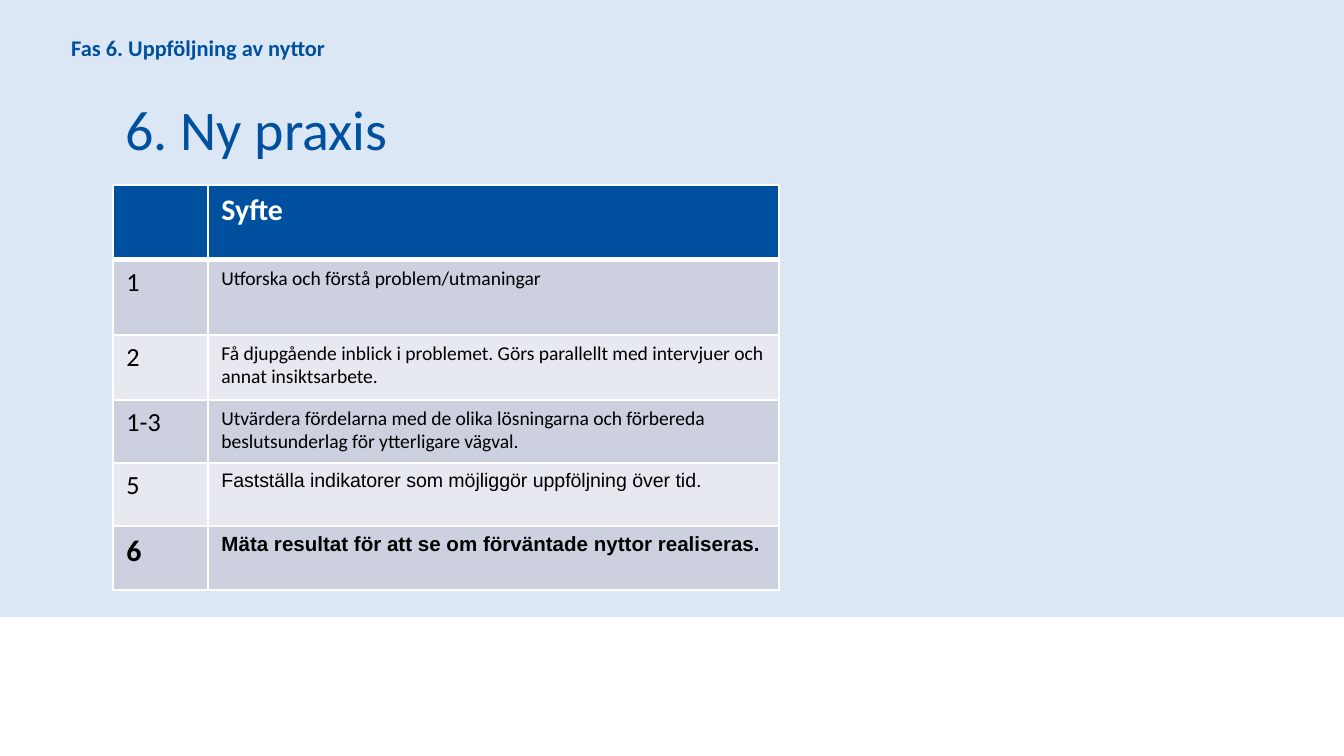
from dataclasses import dataclass

from lxml.etree import SubElement
from pptx import Presentation
from pptx.dml.color import RGBColor
from pptx.enum.shapes import MSO_SHAPE
from pptx.enum.text import MSO_ANCHOR, MSO_AUTO_SIZE, PP_ALIGN
from pptx.oxml.ns import qn
from pptx.shapes.base import BaseShape
from pptx.slide import Slide
from pptx.table import _Cell
from pptx.text.text import TextFrame
from pptx.util import Emu, Pt

PIXELS_PER_INCH = 134.4
BLUE = RGBColor(0x00, 0x50, 0xA0)
PALE_BLUE = RGBColor(0xDC, 0xE7, 0xF6)
DARK_BAND = RGBColor(0xCC, 0xD0, 0xDF)
LIGHT_BAND = RGBColor(0xE7, 0xE9, 0xF0)
WHITE = RGBColor(0xFF, 0xFF, 0xFF)
BLACK = RGBColor(0x00, 0x00, 0x00)


@dataclass(frozen=True)
class Box:
    left: int
    top: int
    width: int
    height: int


@dataclass(frozen=True)
class TextStyle:
    size: float
    color: RGBColor = BLACK
    font: str = "Calibri"
    bold: bool = False


@dataclass(frozen=True)
class PurposeRow:
    phase: str
    purpose: str
    height: int
    phase_style: TextStyle = TextStyle(14)
    purpose_style: TextStyle = TextStyle(10.5)


SLIDE_BOX = Box(0, 0, 1344, 756)
PANEL_BOX = Box(0, 0, 1344, 617)
TITLE_BOX = Box(112, 85, 1133, 86)
PHASE_BOX = Box(58, 36, 1185, 24)
TABLE_BOX = Box(113, 185, 666, 405)
COLUMN_WIDTHS = (95, 571)

HEADER_STYLE = TextStyle(16, WHITE, bold=True)
ROWS = (
    PurposeRow("", "Syfte", 75, HEADER_STYLE, HEADER_STYLE),
    PurposeRow("1", "Utforska och förstå problem/utmaningar", 75),
    PurposeRow(
        "2",
        "Få djupgående inblick i problemet. Görs parallellt med intervjuer och annat insiktsarbete.",
        65,
    ),
    PurposeRow(
        "1-3",
        "Utvärdera fördelarna med de olika lösningarna och förbereda beslutsunderlag för ytterligare vägval.",
        63,
    ),
    PurposeRow(
        "5",
        "Fastställa indikatorer som möjliggör uppföljning över tid.",
        63,
        purpose_style=TextStyle(10.5, font="Arial"),
    ),
    PurposeRow(
        "6",
        "Mäta resultat för att se om förväntade nyttor realiseras.",
        64,
        TextStyle(16, bold=True),
        TextStyle(11, font="Arial", bold=True),
    ),
)


def px(length: int) -> Emu:
    return Emu(round(length * 914400 / PIXELS_PER_INCH))


def bounds(box: Box) -> tuple[Emu, Emu, Emu, Emu]:
    return px(box.left), px(box.top), px(box.width), px(box.height)


def write_text(text_frame: TextFrame, text: str, style: TextStyle) -> None:
    paragraph = text_frame.paragraphs[0]
    paragraph.alignment = PP_ALIGN.LEFT
    run = paragraph.add_run()
    run.text = text
    run.font.name = style.font
    run.font.size = Pt(style.size)
    run.font.bold = style.bold
    run.font.color.rgb = style.color


def write_heading(shape: BaseShape, text: str, style: TextStyle) -> None:
    text_frame = shape.text_frame
    text_frame.word_wrap = True
    text_frame.auto_size = MSO_AUTO_SIZE.NONE
    text_frame.vertical_anchor = MSO_ANCHOR.MIDDLE
    write_text(text_frame, text, style)


def draw_panel(slide: Slide) -> None:
    panel = slide.shapes.add_shape(MSO_SHAPE.RECTANGLE, *bounds(PANEL_BOX))
    panel.shadow.inherit = False
    panel.fill.solid()
    panel.fill.fore_color.rgb = PALE_BLUE
    panel.line.fill.background()
    slide.shapes._spTree.insert(2, panel._element)


def draw_title(slide: Slide) -> None:
    title = slide.shapes.title
    title.left, title.top, title.width, title.height = bounds(TITLE_BOX)
    write_heading(title, "6. Ny praxis", TextStyle(30, BLUE))


def draw_phase(slide: Slide) -> None:
    phase = slide.shapes.add_textbox(*bounds(PHASE_BOX))
    write_heading(phase, "Fas 6. Uppföljning av nyttor", TextStyle(12, BLUE, bold=True))


def set_borders(cell: _Cell, top: int, bottom: int) -> None:
    properties = cell._tc.get_or_add_tcPr()
    for side, width in (("L", 1), ("R", 1), ("T", top), ("B", bottom)):
        line = SubElement(properties, qn(f"a:ln{side}"), w=str(Pt(width)))
        fill = SubElement(line, qn("a:solidFill"))
        SubElement(fill, qn("a:srgbClr"), val=str(WHITE))


def row_fill(index: int) -> RGBColor:
    if index == 0:
        return BLUE
    return DARK_BAND if index % 2 else LIGHT_BAND


def draw_table(slide: Slide) -> None:
    frame = slide.shapes.add_table(len(ROWS), len(COLUMN_WIDTHS), *bounds(TABLE_BOX))
    table = frame.table
    for column, width in zip(table.columns, COLUMN_WIDTHS):
        column.width = px(width)
    for index, row in enumerate(ROWS):
        table.rows[index].height = px(row.height)
        contents = ((row.phase, row.phase_style), (row.purpose, row.purpose_style))
        for column_index, (text, style) in enumerate(contents):
            cell = table.cell(index, column_index)
            set_borders(cell, 3 if index == 1 else 1, 3 if index == 0 else 1)
            cell.fill.solid()
            cell.fill.fore_color.rgb = row_fill(index)
            if text:
                write_text(cell.text_frame, text, style)


def main() -> None:
    presentation = Presentation()
    presentation.slide_width = px(SLIDE_BOX.width)
    presentation.slide_height = px(SLIDE_BOX.height)
    slide = presentation.slides.add_slide(presentation.slide_layouts[5])
    draw_panel(slide)
    draw_title(slide)
    draw_phase(slide)
    draw_table(slide)
    presentation.save("out.pptx")


if __name__ == "__main__":
    main()
